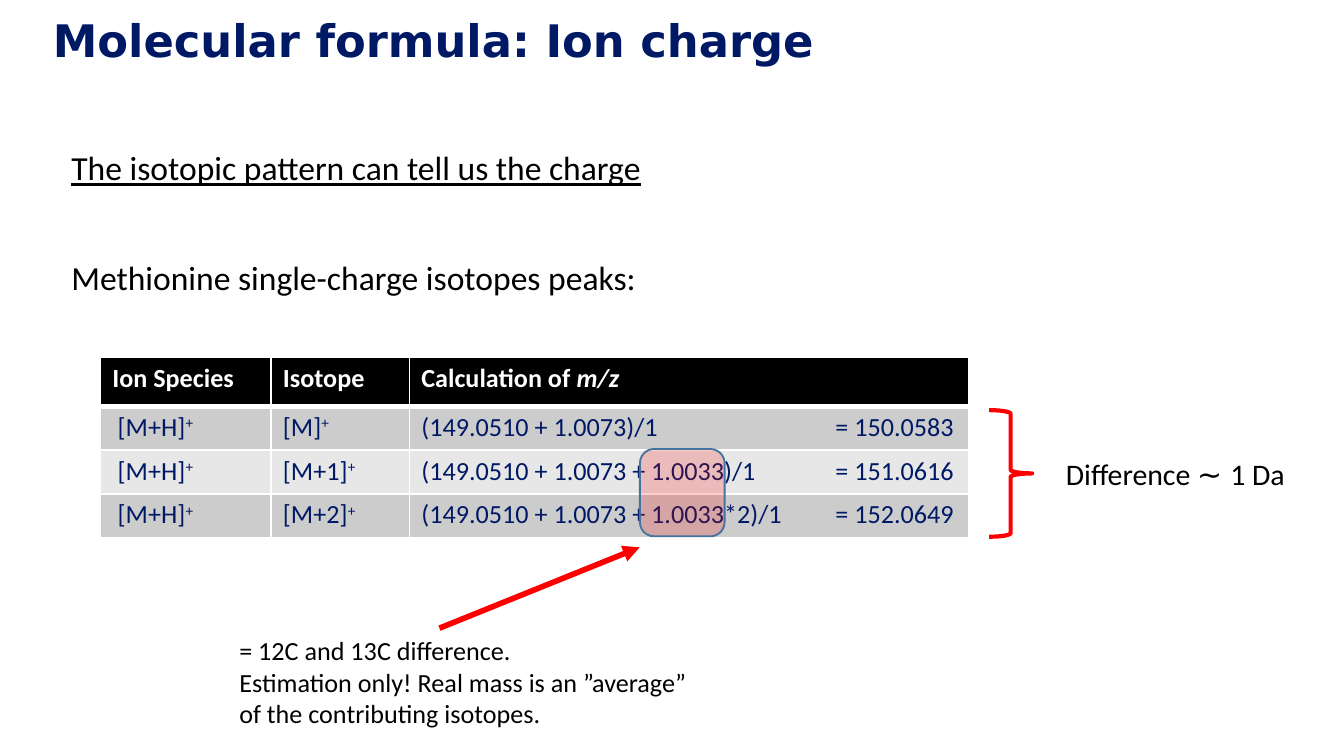
from dataclasses import dataclass, replace

from pptx import Presentation, util as u
from pptx.dml.color import RGBColor
from pptx.enum import shapes, text
from pptx.oxml import parse_xml
from pptx.oxml.ns import nsdecls

WIDTH = u.Inches(10)
HEIGHT = WIDTH * 9 // 16
NAVY, BLACK, WHITE, RED = "001965", "000000", "FFFFFF", "FF0000"
GREY, LIGHT_GREY, STEEL = "CCCCCC", "E7E7E7", "43739E"


@dataclass(frozen=True)
class Style:
    size: float
    color: str = BLACK
    name: str = "Calibri"
    bold: bool = False
    italic: bool = False
    underline: bool = False
    raised: bool = False


@dataclass(frozen=True)
class Box:
    """Left, top, width and height in percent of the slide."""
    x: float
    y: float
    w: float
    h: float

    def emu(self) -> tuple:
        return across(self.x), down(self.y), across(self.w), down(self.h)


@dataclass(frozen=True)
class Isotope:
    label: str
    formula: str
    mz: str


Runs = list[tuple[str, Style]]


def across(percent: float) -> int:
    return round(WIDTH * percent / 100)


def down(percent: float) -> int:
    return round(HEIGHT * percent / 100)


def rgb(color: str) -> RGBColor:
    return RGBColor.from_string(color)


def xml(tag: str, body: str, attrs: str = ""):
    return parse_xml(f'<a:{tag} {nsdecls("a")} {attrs}>{body}</a:{tag}>')


def write(p, runs: Runs) -> None:
    for content, style in runs:
        r = p.add_run()
        r.text = content
        f = r.font
        f.size, f.name = u.Pt(style.size), style.name
        f.bold, f.italic, f.underline = style.bold, style.italic, style.underline
        f.color.rgb = rgb(style.color)
        if style.raised:
            r._r.get_or_add_rPr().set("baseline", "30000")


def add_text(s, box: Box, paragraphs: list[Runs]):
    tf = s.shapes.add_textbox(*box.emu()).text_frame
    tf.word_wrap = True
    for i, runs in enumerate(paragraphs):
        write(tf.add_paragraph() if i else tf.paragraphs[0], runs)
    return tf


def add_outline(s, kind, box: Box, color: str, width: float):
    sp = s.shapes.add_shape(kind, *box.emu())
    sp.shadow.inherit = False
    sp.fill.background()
    sp.line.color.rgb = rgb(color)
    sp.line.width = u.Pt(width)
    return sp


def add_arrow(s, start: tuple, end: tuple, color: str, width: float) -> None:
    line = s.shapes.add_connector(
        shapes.MSO_CONNECTOR.STRAIGHT,
        across(start[0]), down(start[1]), across(end[0]), down(end[1]))
    line.line.color.rgb = rgb(color)
    line.line.width = u.Pt(width)
    spPr = line._element.spPr
    spPr.find("{*}ln").append(xml("tailEnd", "", 'type="triangle"'))
    spPr.append(xml("effectLst", ""))


def fill_cell(cell, runs: Runs, fill: str, top: float, bottom: float) -> None:
    """Write a cell; top and bottom are border widths in points."""
    cell.fill.solid()
    cell.fill.fore_color.rgb = rgb(fill)
    cell.margin_left = cell.margin_right = u.Inches(0.09)
    cell.margin_top = cell.margin_bottom = u.Inches(0.04)
    borders = {"lnL": 1, "lnR": 1, "lnT": top, "lnB": bottom}
    color = f'<a:solidFill><a:srgbClr val="{WHITE}"/></a:solidFill>'
    for i, (tag, width) in enumerate(borders.items()):
        cell._tc.get_or_add_tcPr().insert(i, xml(tag, color, f'w="{u.Pt(width)}"'))
    write(cell.text_frame.paragraphs[0], runs)


def add_isotope_table(s, box: Box, columns: list[float], header_height: float,
                      isotopes: list[Isotope]) -> None:
    table = s.shapes.add_table(len(isotopes) + 1, len(columns), *box.emu()).table
    for column, width in zip(table.columns, columns):
        column.width = across(width)
    row_height = (box.h - header_height) / len(isotopes)
    for i, row in enumerate(table.rows):
        row.height = down(row_height if i else header_height)

    head = Style(14, WHITE, bold=True)
    headings = [[("Ion Species", head)], [("Isotope", head)],
                [("Calculation of ", head), ("m/z", replace(head, italic=True))]]
    for j, runs in enumerate(headings):
        fill_cell(table.cell(0, j), runs, BLACK, 1, 3)

    body = Style(14, NAVY)
    plus = ("+", replace(body, raised=True))
    for i, isotope in enumerate(isotopes, 1):
        entries = [[("[M+H]", body), plus], [(isotope.label, body), plus],
                   [(f"{isotope.formula}\t= {isotope.mz}", body)]]
        tab = f'<a:tab pos="{across(30.8)}" algn="l"/>'
        pPr = table.cell(i, 2).text_frame.paragraphs[0]._p.get_or_add_pPr()
        pPr.append(xml("tabLst", tab))
        for j, runs in enumerate(entries):
            fill_cell(table.cell(i, j), runs, GREY if i % 2 else LIGHT_GREY,
                      3 if i == 1 else 1, 1)
        table.cell(i, 0).margin_left = u.Inches(0.13)


def main() -> None:
    prs = Presentation()
    prs.slide_width, prs.slide_height = WIDTH, HEIGHT
    s = prs.slides.add_slide(prs.slide_layouts[6])

    title = Style(24, NAVY, "DejaVu Sans", bold=True)
    tf = add_text(s, Box(0, 0, 100, 10.5), [[("Molecular formula: Ion charge", title)]])
    tf.vertical_anchor = text.MSO_ANCHOR.MIDDLE
    tf.margin_left = across(3.94)
    tf.margin_top = tf.margin_right = tf.margin_bottom = 0

    lead = Style(18)
    tf = add_text(s, Box(4.33, 19.2, 45.7, 23.8), [
        [("The isotopic pattern can tell us the charge", replace(lead, underline=True))],
        [("Methionine single-charge isotopes peaks:", lead)]])
    for p in tf.paragraphs:
        p.line_spacing = 0.9
    tf.paragraphs[1].space_before = u.Pt(39.5)

    add_isotope_table(s, Box(7.46, 47.3, 64.6, 23.8), [12.7, 10.3, 41.6], 6.45, [
        Isotope("[M]", "(149.0510 + 1.0073)/1", "150.0583"),
        Isotope("[M+1]", "(149.0510 + 1.0073 + 1.0033)/1", "151.0616"),
        Isotope("[M+2]", "(149.0510 + 1.0073 + 1.0033*2)/1", "152.0649")])

    highlight = add_outline(s, shapes.MSO_SHAPE.ROUNDED_RECTANGLE,
                            Box(47.62, 59.4, 6.3, 11.55), STEEL, 1)
    highlight.fill.solid()
    highlight.fill.fore_color.rgb = rgb(RED)
    tint = highlight._element.spPr.find("{*}solidFill/{*}srgbClr")
    tint.append(xml("alpha", "", 'val="19000"'))

    note = Style(14)
    add_text(s, Box(16.82, 83.1, 37.1, 14.4), [
        [("= 12C and 13C difference.", note)],
        [("Estimation only! Real mass is an ”average” of the contributing isotopes.", note)]])
    add_arrow(s, (32.7, 83.1), (47.6, 72.4), RED, 3)

    add_outline(s, shapes.MSO_SHAPE.RIGHT_BRACE, Box(73.6, 54.25, 3.2, 16.75), RED, 2.25)
    label = Style(16)
    add_text(s, Box(78.33, 59.4, 19.6, 6.6), [
        [("Difference ", label), ("∼ ", replace(label, name="Arial")), ("1 Da", label)]])

    prs.save("out.pptx")


if __name__ == "__main__":
    main()
